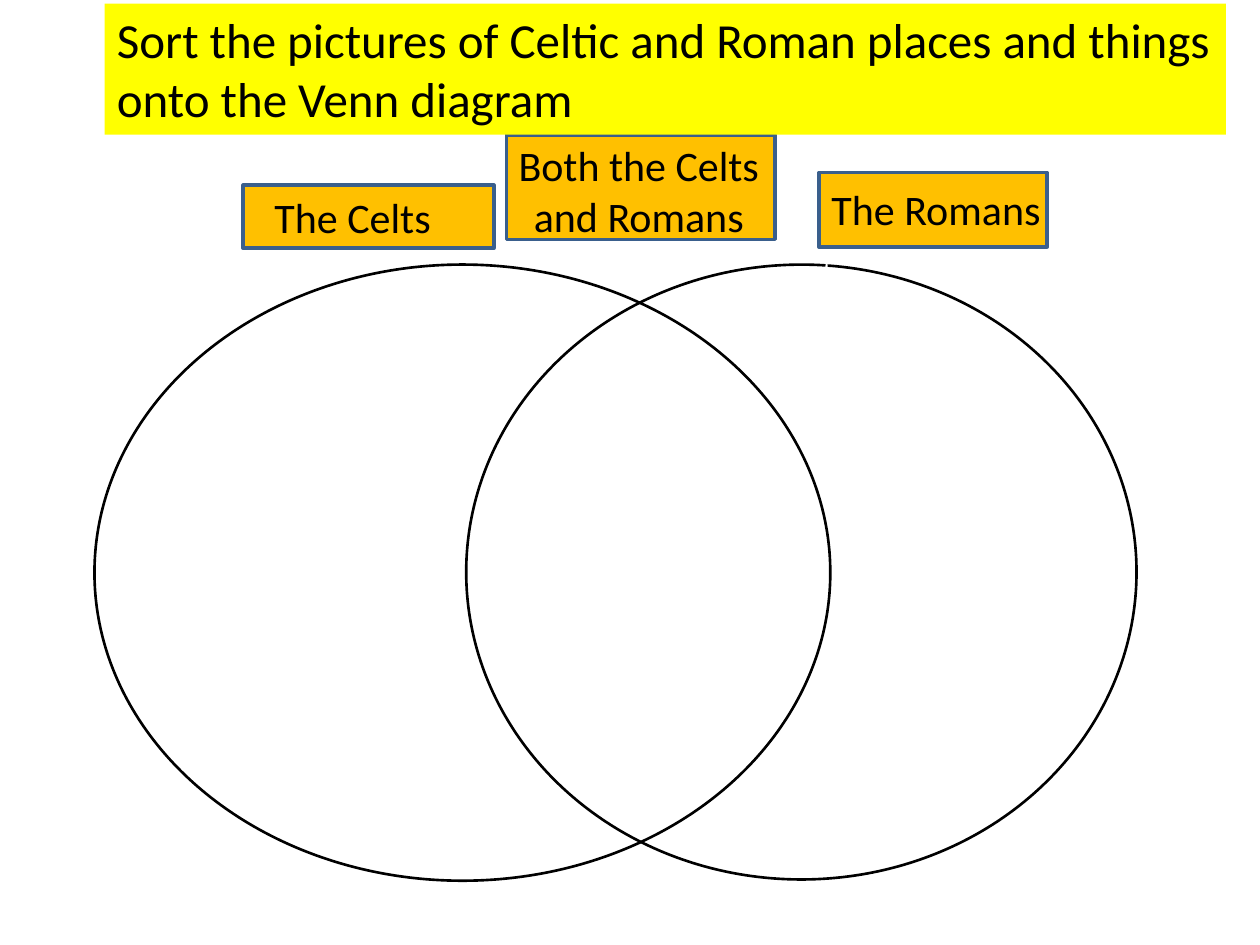
from pptx import Presentation
from pptx import util as u
from pptx.dml.color import RGBColor
from pptx.enum import shapes, text

SLIDE_W, SLIDE_H = u.Inches(10), u.Inches(7.5)
COLS, ROWS = 100, 75  # square grid cells
FONT = "Calibri"
BLACK, WHITE, YELLOW, ORANGE, BLUE = "000000", "FFFFFF", "FFFF00", "FFC000", "3A5F8C"
SHAPE = shapes.MSO_SHAPE


def color(value):
    return RGBColor.from_string(value)


def place(box):
    """Turn a box in grid columns and rows into slide lengths."""
    x, y, w, h = box
    col, row = SLIDE_W / COLS, SLIDE_H / ROWS
    return [u.Emu(round(n)) for n in (x * col, y * row, w * col, h * row)]


def inside(box, dx, dy, w, h):
    """Give a box that is offset from the corner of a region."""
    return box[0] + dx, box[1] + dy, w, h


def add_shape(s, kind, box, fill=None, line=None, width=1.5):
    sp = s.shapes.add_shape(kind, *place(box))
    sp.shadow.inherit = False
    if fill:
        sp.fill.solid()
        sp.fill.fore_color.rgb = color(fill)
    else:
        sp.fill.background()
    if line:
        sp.line.color.rgb = color(line)
        sp.line.width = u.Pt(width)
    else:
        sp.line.fill.background()
    return sp


def write(sp, content, size=24, align=text.PP_ALIGN.LEFT, ink=BLACK):
    tf = sp.text_frame
    tf.word_wrap = True
    tf.auto_size = text.MSO_AUTO_SIZE.SHAPE_TO_FIT_TEXT
    tf.vertical_anchor = text.MSO_ANCHOR.TOP
    p = tf.paragraphs[0]
    p.alignment = align
    r = p.add_run()
    r.text = content
    r.font.name = FONT
    r.font.size = u.Pt(size)
    r.font.color.rgb = color(ink)


def add_plates(s, box):
    # Coloured plates behind the set names: Romans, both, Celts
    for plate in [(45.7, 3.1, 18.1, 5.9), (20.9, 0.1, 21.3, 8.3), (0, 4.1, 19.9, 5)]:
        add_shape(s, SHAPE.RECTANGLE, inside(box, *plate), ORANGE, BLUE, 2)


def add_venn(s, box):
    # The Celts
    add_shape(s, SHAPE.OVAL, inside(box, 0, 0, 58.4, box[3]), WHITE, BLACK)
    # The Romans: an unfilled ring with a tiny gap near the top
    ring_w = 53.2
    ring = add_shape(s, SHAPE.ARC, inside(box, box[2] - ring_w, 0, ring_w, 48.8), line=BLACK)
    for i, degrees in enumerate((274.9, 274.5)):
        ring.adjustments[i] = degrees * 0.6


def add_names(s, box):
    names = [
        ("The Celts", (1.5, 4.1, 19.7, 5), text.PP_ALIGN.LEFT),
        ("The Romans", (45.7, 3.5, 19.9, 5), text.PP_ALIGN.LEFT),
        ("Both the Celts and Romans", (18.3, 0, 26.2, 9.1), text.PP_ALIGN.CENTER),
    ]
    for name, part, align in names:
        write(s.shapes.add_textbox(*place(inside(box, *part))), name, align=align)


def add_title(s, box):
    sp = add_shape(s, SHAPE.RECTANGLE, box, YELLOW)
    write(sp, "Sort the pictures of Celtic and Roman places and things onto the Venn diagram", size=28)


def main():
    prs = Presentation()
    prs.slide_width, prs.slide_height = SLIDE_W, SLIDE_H
    s = prs.slides.add_slide(prs.slide_layouts[6])
    s.background.fill.solid()
    s.background.fill.fore_color.rgb = color(WHITE)

    labels = (19.3, 10.6, 65.6, 9.1)
    add_plates(s, labels)
    add_venn(s, (7.5, 21, 82.7, 48.9))
    add_names(s, labels)
    add_title(s, (8.3, 0.3, 89, 10.4))
    prs.save("out.pptx")


if __name__ == "__main__":
    main()
